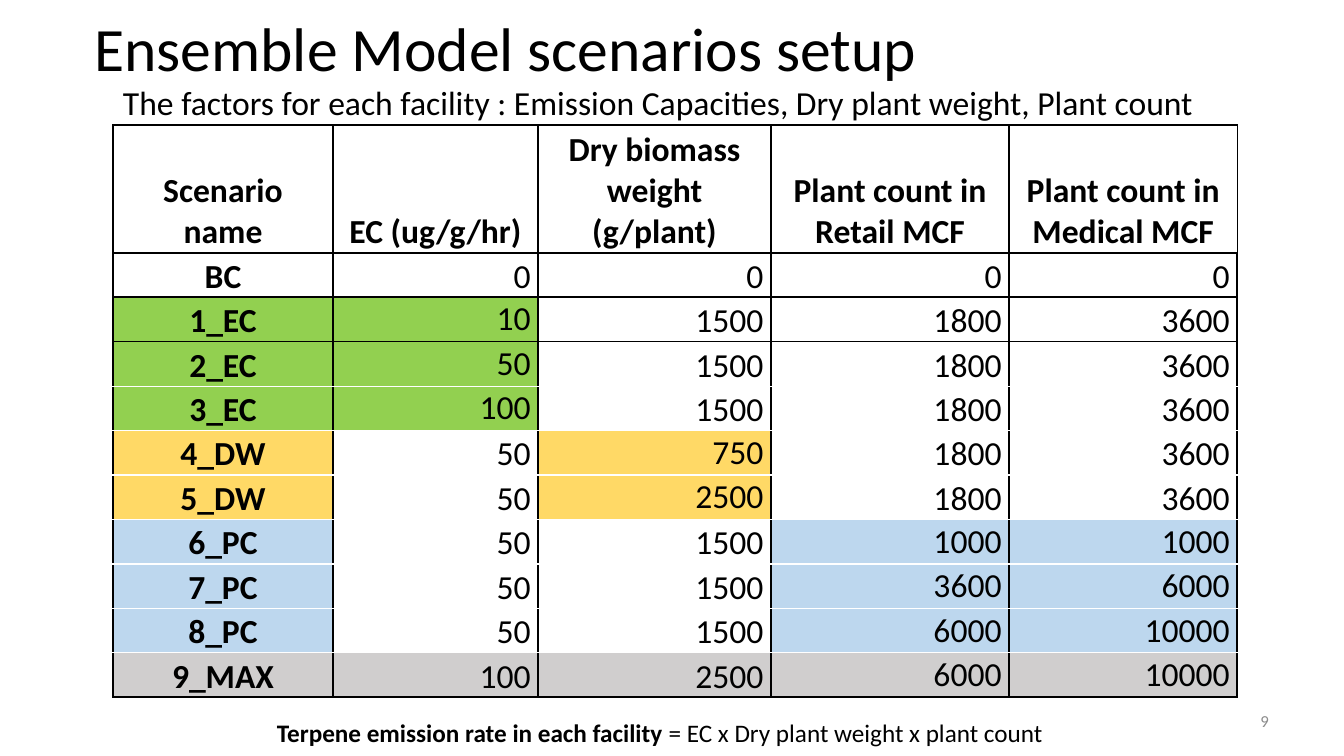
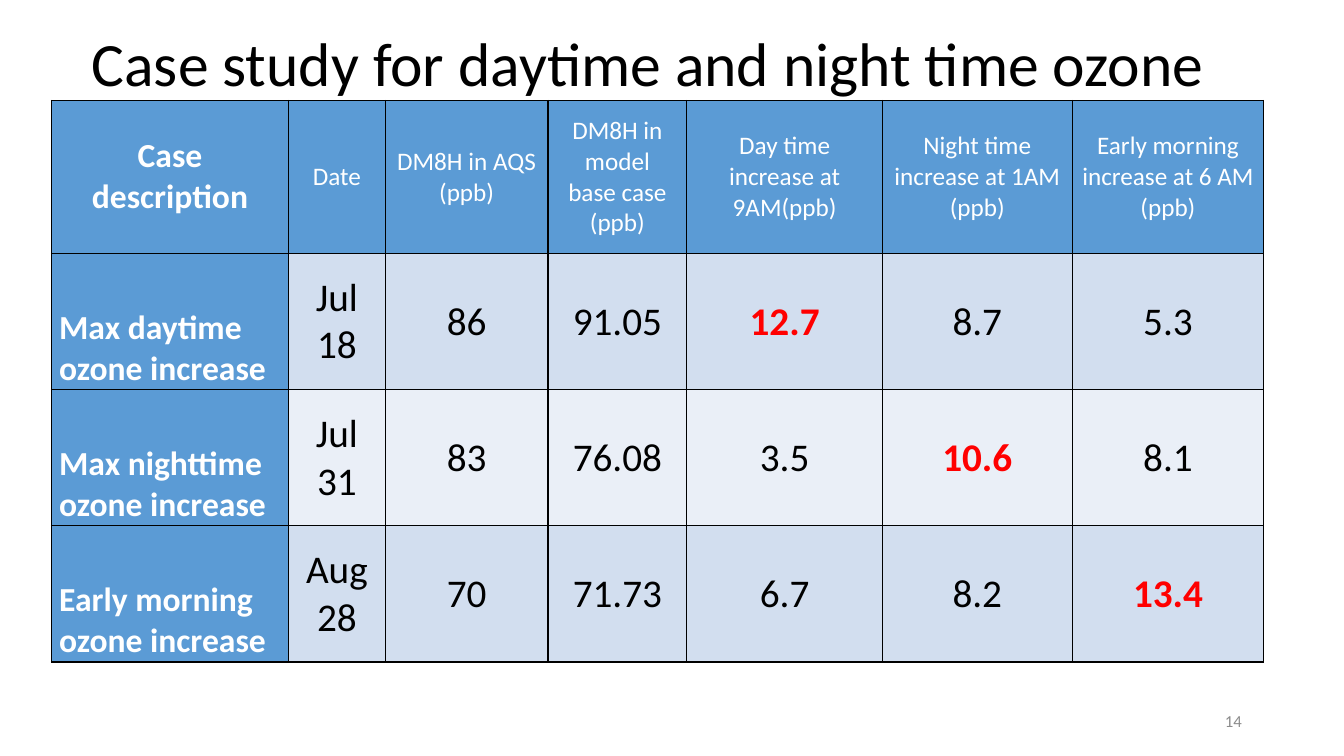
from dataclasses import dataclass

from lxml import etree
from pptx import Presentation
from pptx.dml.color import RGBColor
from pptx.enum.text import MSO_ANCHOR, PP_ALIGN
from pptx.oxml.ns import qn
from pptx.util import Cm, Pt

LEFT, CENTER, RIGHT = PP_ALIGN.LEFT, PP_ALIGN.CENTER, PP_ALIGN.RIGHT
TOP, MIDDLE, BOTTOM = MSO_ANCHOR.TOP, MSO_ANCHOR.MIDDLE, MSO_ANCHOR.BOTTOM


@dataclass(frozen=True)
class Theme:
    font: str = "Calibri"
    ink: str = "000000"
    paper: str = "FFFFFF"
    muted: str = "8C8C8C"
    peak: str = "FF0000"
    green: str = "92D050"
    yellow: str = "FFD966"
    sky: str = "BDD7EE"
    grey: str = "D0CECE"
    blue: str = "5B9BD5"
    bands: tuple = ("D2DEEF", "EAEFF7")
    title: int = 44
    value: int = 28
    body: int = 24
    small: int = 18
    page: int = 12
    thin: float = 1
    thick: float = 1.5


THEME = Theme()

SCENARIO_TITLE = "Ensemble Model scenarios setup"
FACTORS = "The factors for each facility : Emission Capacities, Dry plant weight, Plant count"
FORMULA = ("Terpene emission rate in each facility ", "= EC x Dry plant weight x plant count")
SCENARIOS = [
    ("Scenario name", "EC (ug/g/hr)", "Dry biomass weight (g/plant)",
     "Plant count in Retail MCF", "Plant count in Medical MCF"),
    ("BC", 0, 0, 0, 0),
    ("1_EC", 10, 1500, 1800, 3600),
    ("2_EC", 50, 1500, 1800, 3600),
    ("3_EC", 100, 1500, 1800, 3600),
    ("4_DW", 50, 750, 1800, 3600),
    ("5_DW", 50, 2500, 1800, 3600),
    ("6_PC", 50, 1500, 1000, 1000),
    ("7_PC", 50, 1500, 3600, 6000),
    ("8_PC", 50, 1500, 6000, 10000),
    ("9_MAX", 100, 2500, 6000, 10000),
]
GROUPS = {
    "EC": {"fill": THEME.green, "filled": (0, 1), "centred": (1,)},
    "DW": {"fill": THEME.yellow, "filled": (0, 2), "centred": (2,)},
    "PC": {"fill": THEME.sky, "filled": (0, 3, 4), "centred": (3, 4)},
    "MAX": {"fill": THEME.grey, "filled": (0, 1, 2, 3, 4), "centred": (3, 4)},
}
UNGROUPED = {"fill": None, "filled": (), "centred": ()}
SCENARIO_WIDTHS = (5.54, 5.17, 5.87, 6, 5.75)
SCENARIO_HEIGHTS = (3.22,) + (1.12,) * 10

CASE_TITLE = "Case study for daytime and night time ozone"
CASES = [
    ("Case description", "Date", "DM8H in AQS\n(ppb)", "DM8H in model\vbase case\n(ppb)",
     "Day time increase at 9AM(ppb)", "Night time increase at 1AM (ppb)",
     "Early morning increase at 6 AM (ppb)"),
    ("Max daytime ozone increase", "Jul 18", 86, 91.05, 12.7, 8.7, 5.3),
    ("Max nighttime ozone increase", "Jul 31", 83, 76.08, 3.5, 10.6, 8.1),
    ("Early morning ozone increase", "Aug 28", 70, 71.73, 6.7, 8.2, 13.4),
]
FIRST_INCREASE = 4
CASE_WIDTHS = (5.97, 2.44, 4.1, 3.5, 4.93, 4.78, 4.83)
CASE_HEIGHTS = (3.86,) + (3.43,) * 3


def style(paragraph, size, color, bold=False, align=LEFT):
    paragraph.alignment = align
    font = paragraph.font
    font.name, font.size, font.bold = THEME.font, Pt(size), bold
    font.color.rgb = RGBColor.from_string(color)


def add_text(slide, text, box, size, color=THEME.ink, align=LEFT, anchor=TOP, wrap=True):
    frame = slide.shapes.add_textbox(*map(Cm, box)).text_frame
    frame.word_wrap, frame.vertical_anchor = wrap, anchor
    paragraph = frame.paragraphs[0]
    paragraph.text = text
    style(paragraph, size, color, align=align)
    return paragraph


def add_title(slide, text, box):
    add_text(slide, text, box, THEME.title, anchor=MIDDLE).line_spacing = 0.9


def add_page_number(slide, number, left):
    add_text(slide, str(number), (left, 17.65, 7.62, 1.02), THEME.page, THEME.muted, RIGHT, MIDDLE)


def add_grid(slide, rows, left, top, widths, heights):
    frame = slide.shapes.add_table(len(rows), len(widths), Cm(left), Cm(top),
                                   Cm(sum(widths)), Cm(sum(heights)))
    table = frame.table
    table.first_row = table.horz_banding = False
    for column, width in zip(table.columns, widths):
        column.width = Cm(width)
    for row, height in zip(table.rows, heights):
        row.height = Cm(height)
    return table


def set_borders(cell, **sides):
    properties = cell._tc.get_or_add_tcPr()
    for side in "LRTB":
        color, width = sides[side]
        line = etree.SubElement(properties, qn(f"a:ln{side}"), w=str(int(Pt(width))))
        fill = etree.SubElement(line, qn("a:solidFill"))
        etree.SubElement(fill, qn("a:srgbClr"), val=color)


def fill_cell(cell, text, size, color, bold, align, anchor, fill):
    cell.text = str(text)
    cell.margin_left = cell.margin_right = Cm(0.19)
    cell.margin_top = cell.margin_bottom = 0
    cell.vertical_anchor = anchor
    for paragraph in cell.text_frame.paragraphs:
        style(paragraph, size, color, bold, align)
    if fill:
        cell.fill.solid()
        cell.fill.fore_color.rgb = RGBColor.from_string(fill)
    else:
        cell.fill.background()


def scenario_rule(index):
    if index in (1, 2, len(SCENARIOS)):
        return THEME.ink, THEME.thick
    return (THEME.ink if index in (0, 3) else THEME.paper), THEME.thin


def scenario_divider(row, index):
    return THEME.ink, THEME.thin if row == 0 and index > 1 else THEME.thick


def build_scenarios(slide):
    add_title(slide, SCENARIO_TITLE, (2.13, 0.28, 29.21, 2.06))
    table = add_grid(slide, SCENARIOS, 2.85, 3.15, SCENARIO_WIDTHS, SCENARIO_HEIGHTS)
    for r, scenario in enumerate(SCENARIOS):
        group = GROUPS.get(scenario[0].split("_")[-1], UNGROUPED)
        for c, text in enumerate(scenario):
            cell = table.cell(r, c)
            heading = r == 0 or c == 0
            top = (THEME.ink, THEME.thick) if r == c == 0 else scenario_rule(r)
            set_borders(cell, L=scenario_divider(r, c), R=scenario_divider(r, c + 1),
                        T=top, B=scenario_rule(r + 1))
            fill_cell(cell, text, THEME.body, THEME.ink, heading,
                      CENTER if heading else RIGHT,
                      MIDDLE if c in group["centred"] else BOTTOM,
                      group["fill"] if c in group["filled"] else None)
    add_page_number(slide, 9, 24.61)
    add_text(slide, FACTORS, (2.85, 1.93, 27.71, 1.27), THEME.body, wrap=False)
    formula = add_text(slide, FORMULA[0], (6.73, 17.96, 19.99, 1.03), THEME.small, wrap=False)
    formula.runs[0].font.bold = True
    formula.add_run().text = FORMULA[1]


def build_cases(slide):
    add_title(slide, CASE_TITLE, (2.06, -0.15, 29.21, 3.68))
    add_page_number(slide, 14, 23.93)
    table = add_grid(slide, CASES, 1.3, 2.53, CASE_WIDTHS, CASE_HEIGHTS)
    border = (THEME.ink, THEME.thin)
    for r, case in enumerate(CASES):
        peak = max(case[FIRST_INCREASE:]) if r else None
        for c, text in enumerate(case):
            cell = table.cell(r, c)
            set_borders(cell, L=border, R=border, T=border, B=border)
            if c == 0:
                align, anchor = (LEFT, BOTTOM) if r else (CENTER, MIDDLE)
                fill_cell(cell, text, THEME.body, THEME.paper, True, align, anchor, THEME.blue)
            elif r == 0:
                fill_cell(cell, text, THEME.small, THEME.paper, False, CENTER, MIDDLE, THEME.blue)
            else:
                is_peak = c >= FIRST_INCREASE and text == peak
                fill_cell(cell, text, THEME.value, THEME.peak if is_peak else THEME.ink,
                          is_peak, CENTER, MIDDLE, THEME.bands[(r - 1) % 2])


def main():
    deck = Presentation()
    deck.slide_width, deck.slide_height = Cm(33.87), Cm(19.05)
    blank = deck.slide_layouts[6]
    for build in (build_scenarios, build_cases):
        build(deck.slides.add_slide(blank))
    deck.save("out.pptx")


if __name__ == "__main__":
    main()
